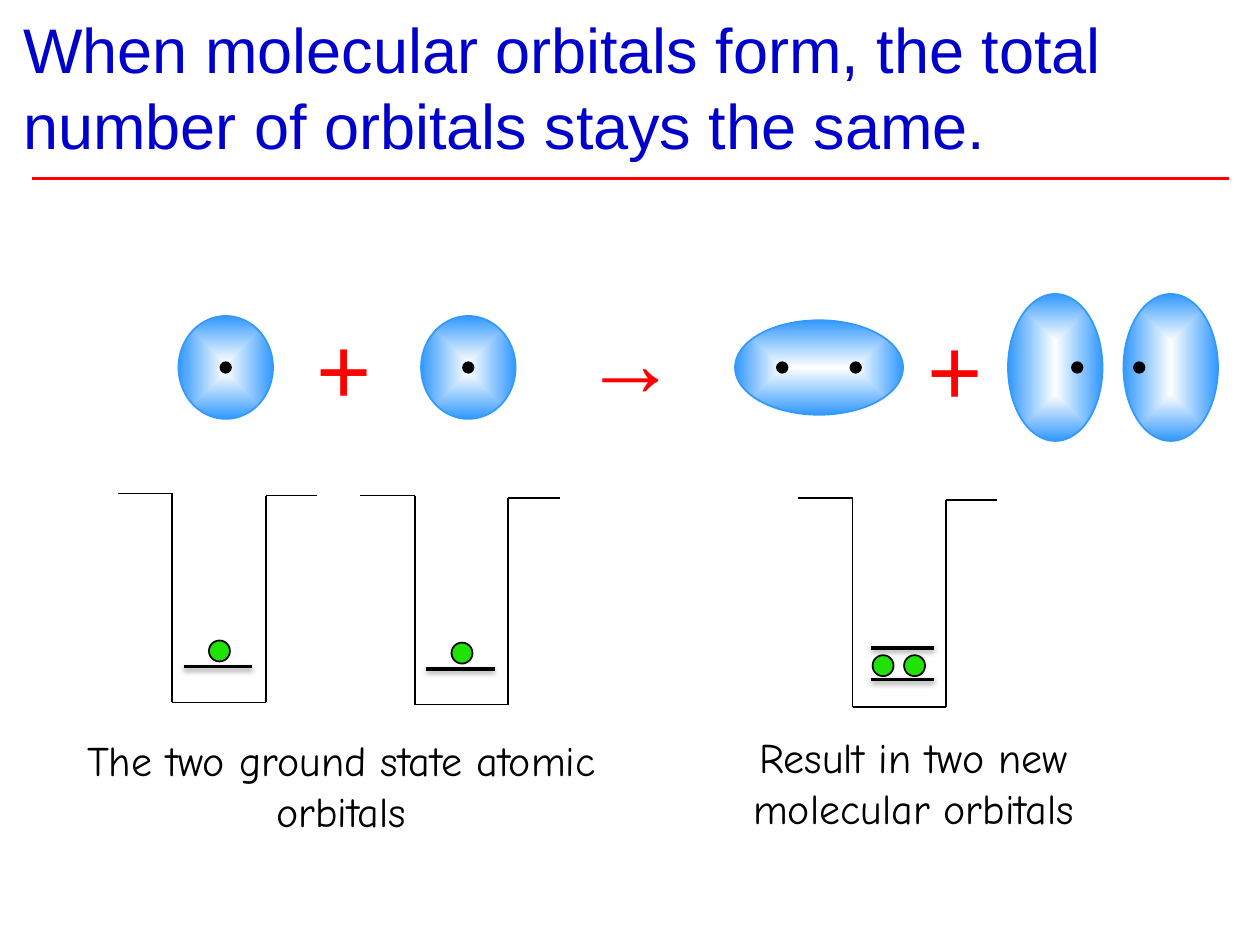
from pptx import Presentation
from pptx.dml.color import RGBColor
from pptx.enum.shapes import MSO_CONNECTOR, MSO_SHAPE
from pptx.enum.text import MSO_ANCHOR, MSO_AUTO_SIZE, PP_ALIGN
from pptx.oxml import parse_xml
from pptx.oxml.ns import nsdecls, qn
from pptx.util import Inches, Pt

LINE = MSO_CONNECTOR.STRAIGHT
OVAL = MSO_SHAPE.OVAL
LEFT, CENTER = PP_ALIGN.LEFT, PP_ALIGN.CENTER
BOTTOM = MSO_ANCHOR.BOTTOM
GROW = MSO_AUTO_SIZE.SHAPE_TO_FIT_TEXT
SHADE = (
    f'<a:effectLst {nsdecls("a")}><a:outerShdw blurRad="39400" dist="20300" '
    'dir="5400000" rotWithShape="0"><a:srgbClr val="000000"><a:alpha val="38000"/>'
    '</a:srgbClr></a:outerShdw></a:effectLst>'
)
PLAIN = f'<a:effectLst {nsdecls("a")}/>'
GLOW = (
    f'<a:path {nsdecls("a")} path="shape">'
    '<a:fillToRect l="50000" t="50000" r="50000" b="50000"/></a:path>'
)


def paint(code):
    return RGBColor.from_string(code)


def grid(*cells):
    return [Inches(cell / 12) for cell in cells]


class Board:
    """Draws on one slide, on a grid of 120 columns by 90 rows."""

    red, blue, black = "FF0000", "0000CC", "000000"
    sky, white, green = "3399FF", "FFFFFF", "20E205"
    sans, hand = "Arial", "Comic Neue"

    def __init__(self, deck):
        self.slide = deck.slides.add_slide(deck.slide_layouts[5])
        self.shapes = self.slide.shapes

    def words(self, frame, text, size, face, color, align):
        frame.text = text
        para = frame.paragraphs[0]
        para.alignment = align
        para.font.size = Pt(size)
        para.font.name = face
        para.font.color.rgb = paint(color)

    def title(self, text):
        box = self.shapes.title
        box.left, box.top, box.width, box.height = grid(1, 0, 118, 16)
        box.text_frame.vertical_anchor = BOTTOM
        self.words(box.text_frame, text, 36, self.sans, self.blue, LEFT)

    def label(self, text, left, top, wide, high, size, face, color, align=LEFT, wrap=True):
        frame = self.shapes.add_textbox(*grid(left, top, wide, high)).text_frame
        frame.word_wrap = wrap
        frame.auto_size = GROW
        self.words(frame, text, size, face, color, align)

    def note(self, text, left, top, wide):
        self.label(text, left, top, wide, 11, 24, self.hand, self.black, CENTER)

    def sign(self, text, left, top, wide):
        self.label(text, left, top, wide, 12, 54, self.sans, self.red, wrap=False)

    def line(self, start, end, color="000000", width=1, effect=PLAIN, host=None):
        link = (host or self.shapes).add_connector(LINE, *grid(*start, *end))
        link.line.color.rgb = paint(color)
        link.line.width = Pt(width)
        link._element.spPr.append(parse_xml(effect))

    def level(self, left, right, y):
        self.line((left, y), (right, y), width=2, effect=SHADE)

    def well(self, x, y):
        group = self.shapes.add_group_shape().shapes
        wall, far, end = x + 5.2, x + 14.1, x + 19
        lip, base = y + 0.2, y + 19.9
        spots = [(x, y), (wall, y), (wall, base), (far, base), (far, lip), (end, lip)]
        for start, stop in zip(spots, spots[1:]):
            self.line(start, stop, host=group)

    def oval(self, x, y, wide, high, fill, edge):
        shape = self.shapes.add_shape(OVAL, *grid(x - wide / 2, y - high / 2, wide, high))
        shape.shadow.inherit = False
        shape.fill.solid()
        shape.fill.fore_color.rgb = paint(fill)
        shape.line.color.rgb = paint(edge)
        shape.line.width = Pt(1)
        return shape

    def cloud(self, x, wide, high):
        shape = self.oval(x, 35, wide, high, self.sky, self.sky)
        shape.fill.gradient()
        for stop, code in zip(shape.fill.gradient_stops, (self.white, self.sky)):
            stop.color.rgb = paint(code)
        grad = shape._element.spPr.find(qn("a:gradFill"))
        grad.replace(grad.find(qn("a:lin")), parse_xml(GLOW))

    def core(self, x):
        self.oval(x, 35, 1, 1, self.black, self.black)

    def spin(self, x, y):
        self.oval(x, y, 2, 2, self.green, self.black)


def main():
    deck = Presentation()
    deck.slide_width, deck.slide_height = grid(120, 90)
    board = Board(deck)
    board.line((3, 17), (117, 17), board.red, 1.5)
    board.title("When molecular orbitals form, the total number of orbitals stays the same.")

    for x, drop in ((21.5, 0), (44.6, 0.2)):
        board.cloud(x, 9, 9.8)
        board.core(x)
        board.well(x - 10.3, 47 + drop)
        board.level(x - 4, x + 2.5, 63.5 + drop)
        board.spin(x - 0.6, 62 + drop)

    board.cloud(78, 16, 9)
    for x in (100.5, 111.5):
        board.cloud(x, 9, 14)
    for x in (74.5, 81.5, 102.6, 108.5):
        board.core(x)

    board.well(76, 47.4)
    for y in (61.7, 64.7):
        board.level(83, 89, y)
    for x in (84.1, 87.1):
        board.spin(x, 63.4)

    board.sign("+", 29, 28.9, 7.7)
    board.sign("→", 54.4, 28.2, 11.5)
    board.sign("+", 87.2, 29, 7.7)
    board.note("The two ground state atomic orbitals", 7, 69.4, 51)
    board.note("Result in two new molecular orbitals", 68, 69.1, 38)
    deck.save("out.pptx")


if __name__ == "__main__":
    main()
